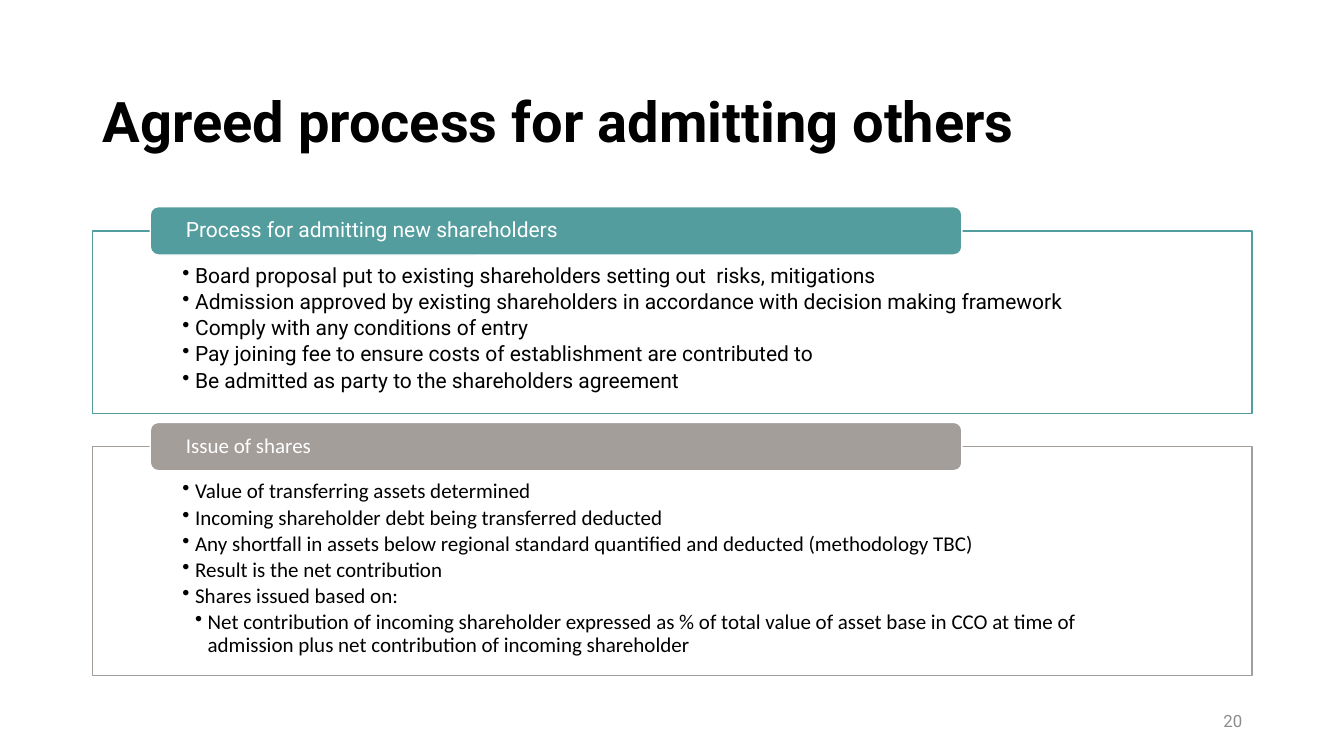
"""Build the slide on the agreed process for admitting others."""
from lxml import etree
from pptx import Presentation, util as u
from pptx.dml.color import RGBColor
from pptx.enum import shapes, text
from pptx.oxml import ns

TITLE = "Agreed process for admitting others"
PAGE = "20"
PANELS = [
    dict(head="Process for admitting new shareholders", top=2.29, high=1.81,
         tint="teal", font="Roboto", items=[
             (1, "Board proposal put to existing shareholders setting out  risks, mitigations"),
             (1, "Admission approved by existing shareholders in accordance with decision making framework"),
             (1, "Comply with any conditions of entry"),
             (1, "Pay joining fee to ensure costs of establishment are contributed to"),
             (1, "Be admitted as party to the shareholders agreement"),
         ]),
    dict(head="Issue of shares", top=4.43, high=2.27,
         tint="stone", font="Calibri", items=[
             (1, "Value of transferring assets determined"),
             (1, "Incoming shareholder debt being transferred deducted"),
             (1, "Any shortfall in assets below regional standard quantified and deducted (methodology TBC)"),
             (1, "Result is the net contribution"),
             (1, "Shares issued based on:"),
             (2, "Net contribution of incoming shareholder expressed as % of total value of asset base "
                 "in CCO at time of admission plus net contribution of incoming shareholder"),
         ]),
]
THEME = dict(black="000000", white="FFFFFF", teal="549D9E", stone="A49E9B", grey="8C8C8C",
             title=40, body=15, page=12, font="Roboto")
LEFT, WIDE = 0.92, 11.5
STEP = 0.125


def color(name):
    return RGBColor.from_string(THEME[name])


def write(shape, lines, size="body", font=THEME["font"], ink="black", bold=False,
          align="LEFT", anchor="MIDDLE", inset=(0.1, 0.05, 0.1, 0.05), lead=0.9, after=0):
    """Fill a shape with (level, text) lines; level 0 has no bullet."""
    frame = shape.text_frame
    frame.word_wrap = True
    frame.vertical_anchor = getattr(text.MSO_ANCHOR, anchor)
    (frame.margin_left, frame.margin_top,
     frame.margin_right, frame.margin_bottom) = map(u.Inches, inset)
    for i, (level, words) in enumerate(lines):
        para = frame.add_paragraph() if i else frame.paragraphs[0]
        para.alignment = getattr(text.PP_ALIGN, align)
        para.line_spacing, para.space_after = lead, u.Pt(after)
        run = para.add_run()
        run.text = words
        run.font.name, run.font.size, run.font.bold = font, u.Pt(THEME[size]), bold
        run.font.color.rgb = color(ink)
        if level:
            para.level = level
            props = para._p.get_or_add_pPr()
            props.set("marL", str(u.Inches(STEP * level)))
            props.set("indent", str(-u.Inches(STEP)))
            etree.SubElement(props, ns.qn("a:buChar")).set("char", "•")


def block(slide, kind, box, fill, line, alpha=None):
    shape = slide.shapes.add_shape(getattr(shapes.MSO_SHAPE, kind), *map(u.Inches, box))
    shape.shadow.inherit = False
    shape.fill.solid()
    shape.fill.fore_color.rgb = color(fill)
    if alpha:
        tone = shape._element.spPr.find(ns.qn("a:solidFill"))[0]
        etree.SubElement(tone, ns.qn("a:alpha")).set("val", str(alpha * 1000))
    shape.line.color.rgb = color(line)
    shape.line.width = u.Pt(1)
    return shape


def label(slide, box, words, **form):
    write(slide.shapes.add_textbox(*map(u.Inches, box)), [(0, words)], **form)


def panel(slide, head, top, high, tint, font, items):
    body = block(slide, "RECTANGLE", (LEFT, top, WIDE, high), "white", tint, alpha=90)
    write(body, items, font=font, anchor="TOP", inset=(0.89, 0.34, 0.89, 0.12), after=2.5)
    tab = block(slide, "ROUNDED_RECTANGLE", (LEFT + 0.57, top - 0.24, 8.05, 0.48), tint, "white")
    write(tab, [(0, head)], font=font, ink="white", inset=(0.33, 0, 0.33, 0))


def main():
    deck = Presentation()
    deck.slide_width, deck.slide_height = u.Inches(13.33), u.Inches(7.5)
    slide = deck.slides.add_slide(deck.slide_layouts[6])
    label(slide, (LEFT, 0.61, WIDE, 1.24), TITLE, size="title", bold=True)
    for part in PANELS:
        panel(slide, **part)
    label(slide, (LEFT + WIDE - 3, 6.95, 3, 0.4), PAGE, size="page", ink="grey",
          align="RIGHT", lead=1.0)
    deck.save("out.pptx")


if __name__ == "__main__":
    main()
